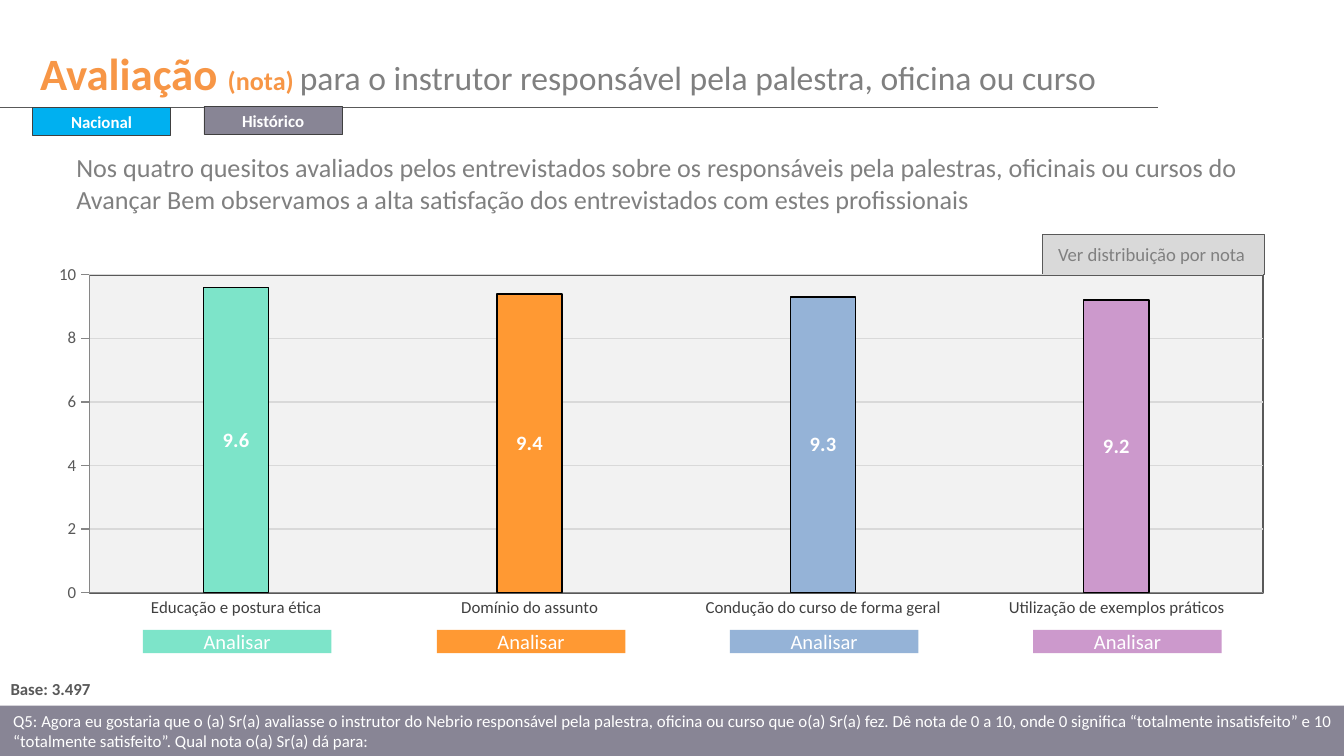
from dataclasses import dataclass

import lxml.etree
import pptx
import pptx.chart.data
import pptx.dml.color
import pptx.enum.chart
import pptx.enum.shapes
import pptx.enum.text
import pptx.oxml
import pptx.oxml.ns
import pptx.util

Pt = pptx.util.Pt
FONT = "Calibri"
LEFT = pptx.enum.text.PP_ALIGN.LEFT
CENTER = pptx.enum.text.PP_ALIGN.CENTER
MIDDLE = pptx.enum.text.MSO_ANCHOR.MIDDLE
TOP = pptx.enum.text.MSO_ANCHOR.TOP


@dataclass
class Box:
    left: float
    top: float
    width: float
    height: float


@dataclass
class Run:
    text: str
    size: float
    color: str
    bold: bool = False


@dataclass
class Question:
    label: str
    score: float
    color: str
    button_left: float


QUESTIONS = [
    Question("Educação e postura ética", 9.6, "7DE4C9", 76.5),
    Question("Domínio do assunto", 9.4, "FF9933", 234),
    Question("Condução do curso de forma geral", 9.3, "95B3D7", 391),
    Question("Utilização de exemplos práticos", 9.2, "CC99CC", 553.5),
]


def rgb(color: str) -> pptx.dml.color.RGBColor:
    return pptx.dml.color.RGBColor.from_string(color)


def set_fill(fill, color: str) -> None:
    fill.solid()
    fill.fore_color.rgb = rgb(color)


def set_line(line, color: str, width: float) -> None:
    line.color.rgb = rgb(color)
    line.width = Pt(width)


def set_font(font, size: float, color: str, bold: bool = False) -> None:
    font.name = FONT
    font.size = Pt(size)
    font.bold = bold
    font.color.rgb = rgb(color)


def write(tf, runs: list[Run], align=LEFT, anchor=TOP, wrap: bool = True) -> None:
    tf.word_wrap = wrap
    tf.vertical_anchor = anchor
    p = tf.paragraphs[0]
    p.alignment = align
    for run in runs:
        r = p.add_run()
        r.text = run.text
        set_font(r.font, run.size, run.color, run.bold)


def add_text(s, box: Box, runs: list[Run], align=LEFT, wrap: bool = True) -> None:
    sp = s.shapes.add_textbox(Pt(box.left), Pt(box.top), Pt(box.width), Pt(box.height))
    write(sp.text_frame, runs, align, wrap=wrap)


def add_rect(s, box: Box, fill: str, runs: list[Run], align=CENTER,
             line: str = "", line_width: float = 0.25) -> None:
    sp = s.shapes.add_shape(pptx.enum.shapes.MSO_SHAPE.RECTANGLE,
                            Pt(box.left), Pt(box.top), Pt(box.width), Pt(box.height))
    sp.shadow.inherit = False
    set_fill(sp.fill, fill)
    if line:
        set_line(sp.line, line, line_width)
    else:
        sp.line.fill.background()
    write(sp.text_frame, runs, align, MIDDLE)


def add_rule(s, y: float, right: float) -> None:
    cxn = s.shapes.add_connector(pptx.enum.shapes.MSO_CONNECTOR.STRAIGHT,
                                 Pt(0), Pt(y), Pt(right), Pt(y))
    set_line(cxn.line, "595959", 0.75)
    lxml.etree.SubElement(cxn._element.spPr, pptx.oxml.ns.qn("a:effectLst"))


def format_plot_area(chart) -> None:
    area = chart._chartSpace.chart.plotArea
    for layout in area.findall(pptx.oxml.ns.qn("c:layout")):
        area.remove(layout)
    ns = pptx.oxml.ns.nsdecls("c", "a")
    modes = '<c:xMode val="edge"/><c:yMode val="edge"/>'
    area.insert(0, pptx.oxml.parse_xml(
        f'<c:layout {ns}><c:manualLayout><c:layoutTarget val="inner"/>{modes}'
        '<c:x val="0.05"/><c:y val="0.02"/><c:w val="0.94"/><c:h val="0.88"/>'
        '</c:manualLayout></c:layout>'))
    area.append(pptx.oxml.parse_xml(
        f'<c:spPr {ns}><a:solidFill><a:srgbClr val="F2F2F2"/></a:solidFill>'
        '<a:ln w="9525"><a:solidFill><a:srgbClr val="595959"/></a:solidFill></a:ln></c:spPr>'))


def add_score_chart(s, box: Box) -> None:
    data = pptx.chart.data.CategoryChartData()
    data.categories = [q.label for q in QUESTIONS]
    data.add_series("Nota", [q.score for q in QUESTIONS])
    chart = s.shapes.add_chart(pptx.enum.chart.XL_CHART_TYPE.COLUMN_CLUSTERED,
                               Pt(box.left), Pt(box.top), Pt(box.width), Pt(box.height),
                               data).chart
    chart.has_legend = False
    chart.has_title = False
    set_font(chart.font, 18, "000000")
    format_plot_area(chart)

    tick = pptx.enum.chart.XL_TICK_MARK
    for axis, mark, color in ((chart.category_axis, tick.NONE, "404040"),
                              (chart.value_axis, tick.OUTSIDE, "595959")):
        axis.major_tick_mark = mark
        axis.minor_tick_mark = tick.NONE
        set_font(axis.tick_labels.font, 9, color)
        set_line(axis.format.line, "868686", 0.75)
    scale = chart.value_axis
    scale.minimum_scale, scale.maximum_scale, scale.major_unit = 0, 10, 2
    scale.tick_labels.number_format = "General"
    scale.tick_labels.number_format_is_linked = False
    set_line(scale.major_gridlines.format.line, "D9D9D9", 0.75)

    plot = chart.plots[0]
    plot.gap_width = 350
    plot.vary_by_categories = False
    series = plot.series[0]
    for i, q in enumerate(QUESTIONS):
        fmt = series.points[i].format
        set_fill(fmt.fill, q.color)
        set_line(fmt.line, "000000", 0.75)
    labels = series.data_labels
    labels.show_value = True
    labels.position = pptx.enum.chart.XL_LABEL_POSITION.CENTER
    labels.number_format = "0.0"
    labels.number_format_is_linked = False
    set_font(labels.font, 11, "FFFFFF", True)


def main() -> None:
    prs = pptx.Presentation()
    prs.slide_width, prs.slide_height = Pt(720), Pt(405)
    s = prs.slides.add_slide(prs.slide_layouts[6])
    set_fill(s.background.fill, "FFFFFF")

    add_rect(s, Box(558.5, 125.5, 119, 21.5), "D9D9D9", [], line="595959", line_width=0.5)
    add_rect(s, Box(0, 378, 720, 27), "888595", [Run(
        "Q5: Agora eu gostaria que o (a) Sr(a) avaliasse o instrutor do Nebrio responsável "
        "pela palestra, oficina ou curso que o(a) Sr(a) fez. Dê nota de 0 a 10, onde 0 "
        "significa “totalmente insatisfeito” e 10 “totalmente satisfeito”. "
        "Qual nota o(a) Sr(a) dá para:", 9, "FFFFFF")], LEFT)
    add_text(s, Box(14.4, 21, 623.5, 36), [
        Run("Avaliação ", 24, "F79646", True),
        Run("(nota) ", 14, "F79646", True),
        Run("para o instrutor responsável pela palestra, oficina ou curso", 18, "808080")])
    add_rule(s, 57.5, 620.5)
    add_text(s, Box(33.8, 77.8, 649.5, 41), [Run(
        "Nos quatro quesitos avaliados pelos entrevistados sobre os responsáveis pela "
        "palestras, oficinais ou cursos do Avançar Bem observamos a alta satisfação dos "
        "entrevistados com estes profissionais", 14, "808080")])
    add_score_chart(s, Box(14.4, 142, 669, 195))
    add_text(s, Box(558.5, 126.7, 119, 19.4),
             [Run("Ver distribuição por nota ", 10, "808080")], CENTER)
    for q in QUESTIONS:
        add_rect(s, Box(q.button_left, 337.5, 101, 12.5), q.color,
                 [Run("Analisar", 11, "FFFFFF")])
    add_text(s, Box(-1.4, 360, 57.6, 18), [Run("Base: 3.497", 9, "595959", True)], wrap=False)
    for label, left, top, color in (("Histórico", 109.2, 57, "888595"),
                                    ("Nacional", 17.3, 57.5, "00B0F0")):
        add_rect(s, Box(left, top, 74.2, 15), color,
                 [Run(label, 9, "FFFFFF", True)], line="404040")
    prs.save("out.pptx")


if __name__ == "__main__":
    main()
